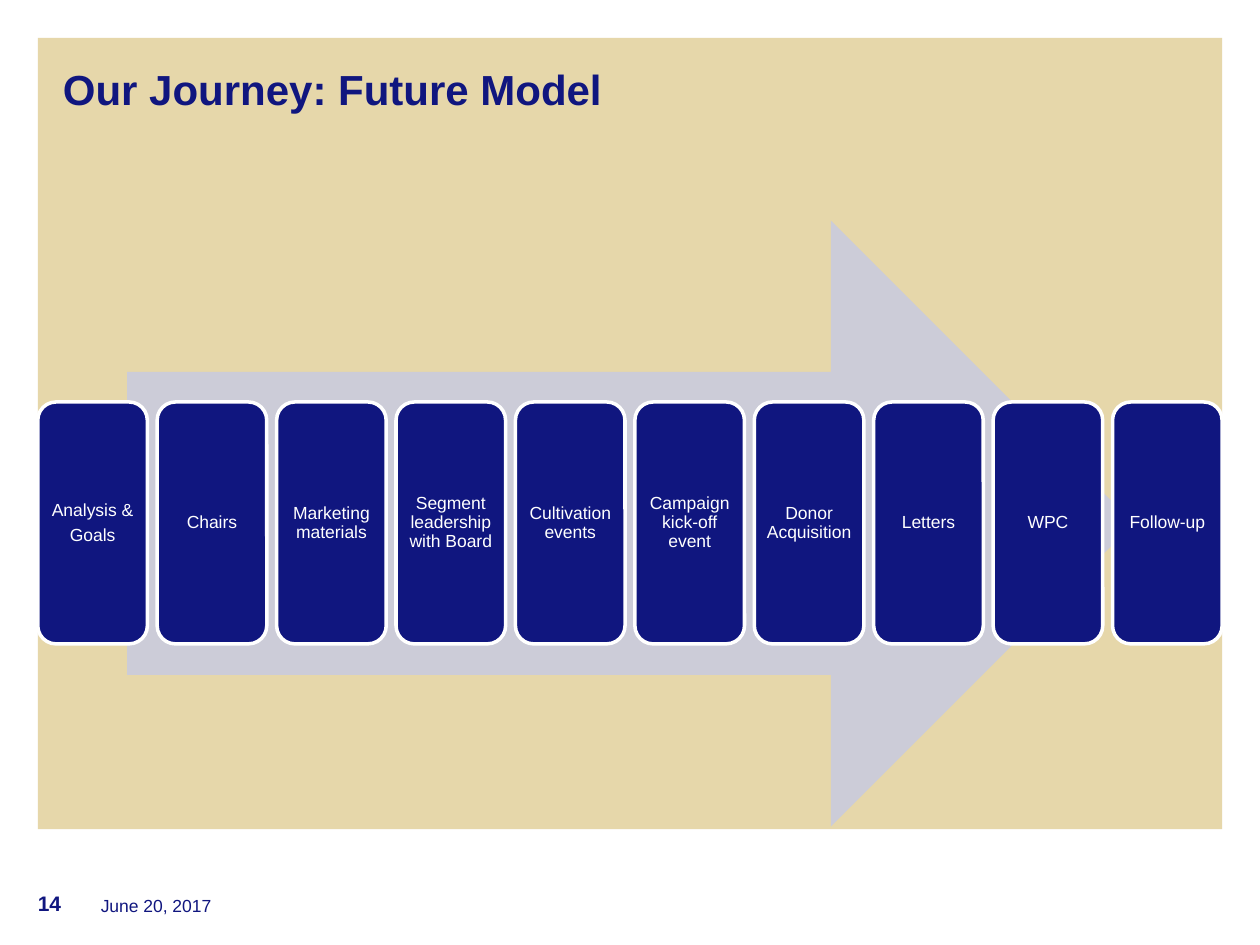
from dataclasses import dataclass

from pptx import Presentation
from pptx.dml.color import RGBColor
from pptx.enum.shapes import MSO_SHAPE as Preset
from pptx.enum.text import MSO_ANCHOR as Anchor, PP_ALIGN as Align
from pptx.shapes.autoshape import Shape
from pptx.slide import Slide
from pptx.util import Inches, Pt


@dataclass(frozen=True)
class Theme:
    """Colours, font and type sizes of the slide."""
    navy: str = "10167F"
    sand: str = "E6D7AA"
    grey: str = "CCCCD8"
    white: str = "FFFFFF"
    font: str = "Arial"
    title_size: int = 24
    number_size: int = 12
    body_size: int = 10


@dataclass(frozen=True)
class Box:
    """Position and size in inches."""
    left: float
    top: float
    width: float
    height: float

    def lengths(self) -> tuple:
        """Return the four measures as lengths."""
        return tuple(Inches(value) for value in (self.left, self.top, self.width, self.height))


@dataclass(frozen=True)
class Step:
    """One stage of the journey, with a paragraph for each line."""
    lines: tuple[str, ...]


THEME = Theme()
STEPS = (
    Step(("Analysis &", "Goals")),
    Step(("Chairs",)),
    Step(("Marketing materials",)),
    Step(("Segment leadership with Board",)),
    Step(("Cultivation events",)),
    Step(("Campaign kick-off event",)),
    Step(("Donor Acquisition",)),
    Step(("Letters",)),
    Step(("WPC",)),
    Step(("Follow-up",)),
)
PANEL = Box(0.3, 0.3, 9.4, 6.28)
ARROW = Box(1.01, 1.75, 7.99, 4.81)
CARD = Box(0.3, 3.19, 0.87, 1.92)


def write_text(shape: Shape, *lines: str, size: int, color: str, bold: bool = False,
               align: Align = Align.LEFT, anchor: Anchor = Anchor.TOP,
               insets: tuple = (0, 0, 0, 0), line_spacing: float = 1.0,
               space_after: float = 0) -> None:
    """Write one paragraph per line into a shape."""
    frame = shape.text_frame
    frame.word_wrap = True
    frame.vertical_anchor = anchor
    frame.margin_left, frame.margin_top, frame.margin_right, frame.margin_bottom = map(Inches, insets)
    frame.text = "\n".join(lines)
    for paragraph in frame.paragraphs:
        paragraph.alignment = align
        paragraph.line_spacing = line_spacing
        paragraph.space_after = Pt(space_after)
        font = paragraph.font
        font.name, font.size, font.bold = THEME.font, Pt(size), bold
        font.color.rgb = RGBColor.from_string(color)


def add_preset(slide: Slide, preset: Preset, box: Box, fill: str, line: str | None = None) -> Shape:
    """Add a flat preset shape with an optional outline."""
    shape = slide.shapes.add_shape(preset, *box.lengths())
    shape.shadow.inherit = False
    shape.fill.solid()
    shape.fill.fore_color.rgb = RGBColor.from_string(fill)
    if line:
        shape.line.color.rgb = RGBColor.from_string(line)
        shape.line.width = Pt(2)
    else:
        shape.line.fill.background()
    return shape


def add_label(slide: Slide, box: Box, text: str, **style) -> None:
    """Add a text box."""
    write_text(slide.shapes.add_textbox(*box.lengths()), text, color=THEME.navy, **style)


def add_steps(slide: Slide) -> None:
    """Spread the step cards evenly across the panel."""
    pitch = (PANEL.width - CARD.width) / (len(STEPS) - 1)
    for index, step in enumerate(STEPS):
        box = Box(CARD.left + index * pitch, CARD.top, CARD.width, CARD.height)
        card = add_preset(slide, Preset.ROUNDED_RECTANGLE, box, THEME.navy, THEME.white)
        write_text(card, *step.lines, size=THEME.body_size, color=THEME.white,
                   align=Align.CENTER, anchor=Anchor.MIDDLE, insets=(0.04,) * 4,
                   line_spacing=0.9, space_after=3.5)


def main() -> None:
    """Build and save the presentation."""
    presentation = Presentation()
    presentation.slide_width, presentation.slide_height = Inches(10), Inches(7.5)
    slide = presentation.slides.add_slide(presentation.slide_layouts[6])
    add_preset(slide, Preset.RECTANGLE, PANEL, THEME.sand)
    add_label(slide, Box(PANEL.left, PANEL.top, PANEL.width, 1.25), "Our Journey: Future Model",
              size=THEME.title_size, bold=True, insets=(0.2, 0.2, 0.5, 0))
    add_preset(slide, Preset.RIGHT_ARROW, ARROW, THEME.grey)
    add_steps(slide)
    footer = {"anchor": Anchor.BOTTOM, "insets": (0, 0, 0, 0.08)}
    add_label(slide, Box(0.8, 6.85, 7, 0.5), "June 20, 2017", size=THEME.body_size, **footer)
    add_label(slide, Box(0.3, 6.85, 0.5, 0.5), "14", size=THEME.number_size, bold=True, **footer)
    presentation.save("out.pptx")


if __name__ == "__main__":
    main()
